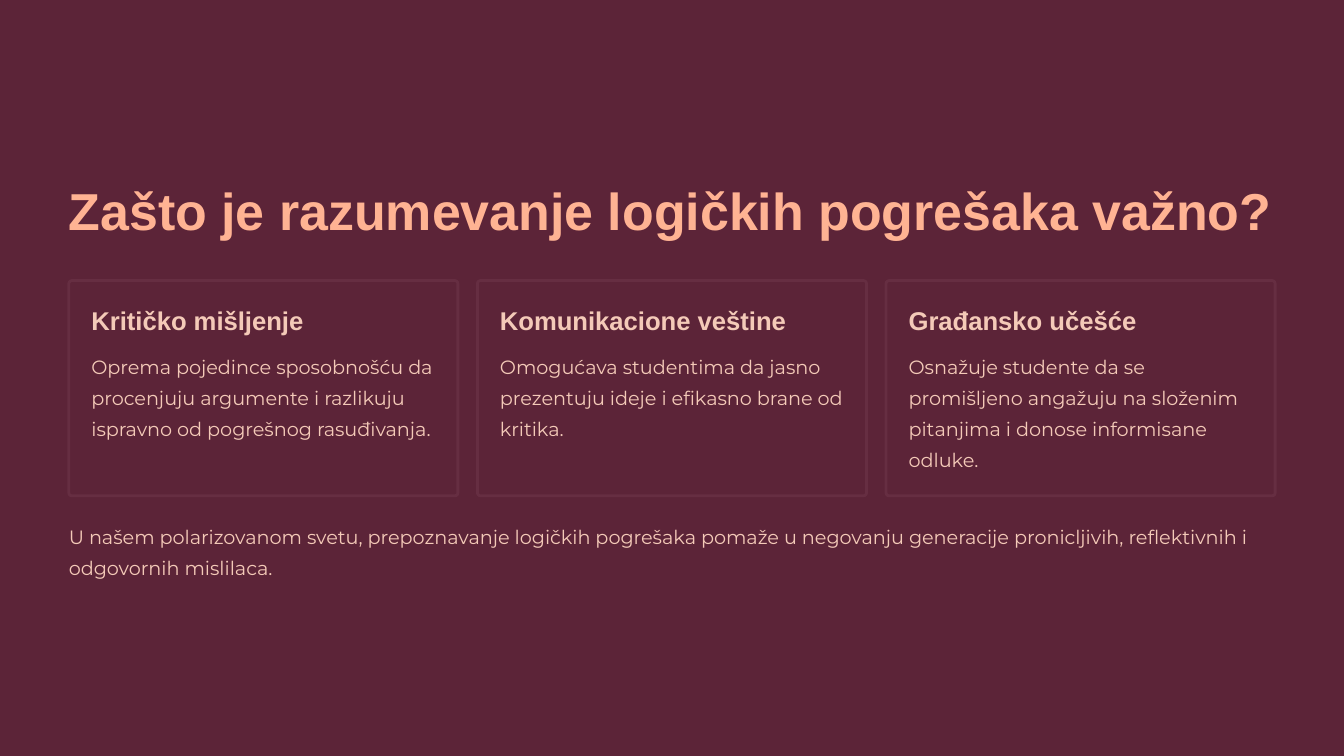
from dataclasses import dataclass

from pptx import Presentation
from pptx.dml.color import RGBColor
from pptx.enum.shapes import MSO_SHAPE
from pptx.util import Pt


@dataclass(frozen=True)
class Theme:
    background: RGBColor = RGBColor.from_string("5C2438")
    border: RGBColor = RGBColor.from_string("662E42")
    title: RGBColor = RGBColor.from_string("FFB393")
    text: RGBColor = RGBColor.from_string("F4CAB8")
    heading_font: str = "Arial"
    body_font: str = "Montserrat"
    title_size: float = 44.5
    heading_size: float = 22
    body_size: float = 16.5


theme = Theme()

LEFT = 59
CONTENT_WIDTH = 1034
CARD_TOP, CARD_WIDTH, CARD_HEIGHT = 240.5, 333.5, 184.5
CARD_PITCH = (CONTENT_WIDTH - CARD_WIDTH) / 2
CARD_PADDING = 19.3
CARD_TEXT_WIDTH = CARD_WIDTH - 2 * CARD_PADDING

cards = [
    ("Kritičko mišljenje",
     "Oprema pojedince sposobnošću da procenjuju argumente i razlikuju "
     "ispravno od pogrešnog rasuđivanja."),
    ("Komunikacione veštine",
     "Omogućava studentima da jasno prezentuju ideje i efikasno brane od kritika."),
    ("Građansko učešće",
     "Osnažuje studente da se promišljeno angažuju na složenim pitanjima "
     "i donose informisane odluke."),
]

presentation = Presentation()
presentation.slide_width = Pt(1152)
presentation.slide_height = Pt(648)
slide = presentation.slides.add_slide(presentation.slide_layouts[6])
slide.background.fill.solid()
slide.background.fill.fore_color.rgb = theme.background


def add_text(text, left, top, width, height, size, line_height,
             color=theme.text, heading=False):
    """Add a wrapping text box without margins; headings are bold."""
    box = slide.shapes.add_textbox(Pt(left), Pt(top), Pt(width), Pt(height))
    frame = box.text_frame
    frame.margin_left = frame.margin_top = frame.margin_right = frame.margin_bottom = 0
    frame.word_wrap = True
    paragraph = frame.paragraphs[0]
    paragraph.text = text
    paragraph.line_spacing = Pt(line_height)
    font = paragraph.font
    font.name = theme.heading_font if heading else theme.body_font
    font.size = Pt(size)
    font.bold = heading
    font.color.rgb = color


add_text("Zašto je razumevanje logičkih pogrešaka važno?", LEFT, 150.5, CONTENT_WIDTH, 56,
         theme.title_size, 56, theme.title, heading=True)

for index, (heading, body) in enumerate(cards):
    card_left = LEFT + index * CARD_PITCH
    card = slide.shapes.add_shape(MSO_SHAPE.ROUNDED_RECTANGLE, Pt(card_left),
                                  Pt(CARD_TOP), Pt(CARD_WIDTH), Pt(CARD_HEIGHT))
    card.adjustments[0] = 0.014
    card.shadow.inherit = False
    card.fill.solid()
    card.fill.fore_color.rgb = theme.background
    card.line.color.rgb = theme.border
    card.line.width = Pt(2.4)

    text_left = card_left + CARD_PADDING
    add_text(heading, text_left, 259.6, CARD_TEXT_WIDTH, 28,
             theme.heading_size, 28, heading=True)
    add_text(body, text_left, 297.7, CARD_TEXT_WIDTH, 108, theme.body_size, 26.5)

add_text("U našem polarizovanom svetu, prepoznavanje logičkih pogrešaka pomaže u "
         "negovanju generacije pronicljivih, reflektivnih i odgovornih mislilaca.",
         LEFT, 443.5, CONTENT_WIDTH, 54, theme.body_size, 26.5)

presentation.save("out.pptx")
